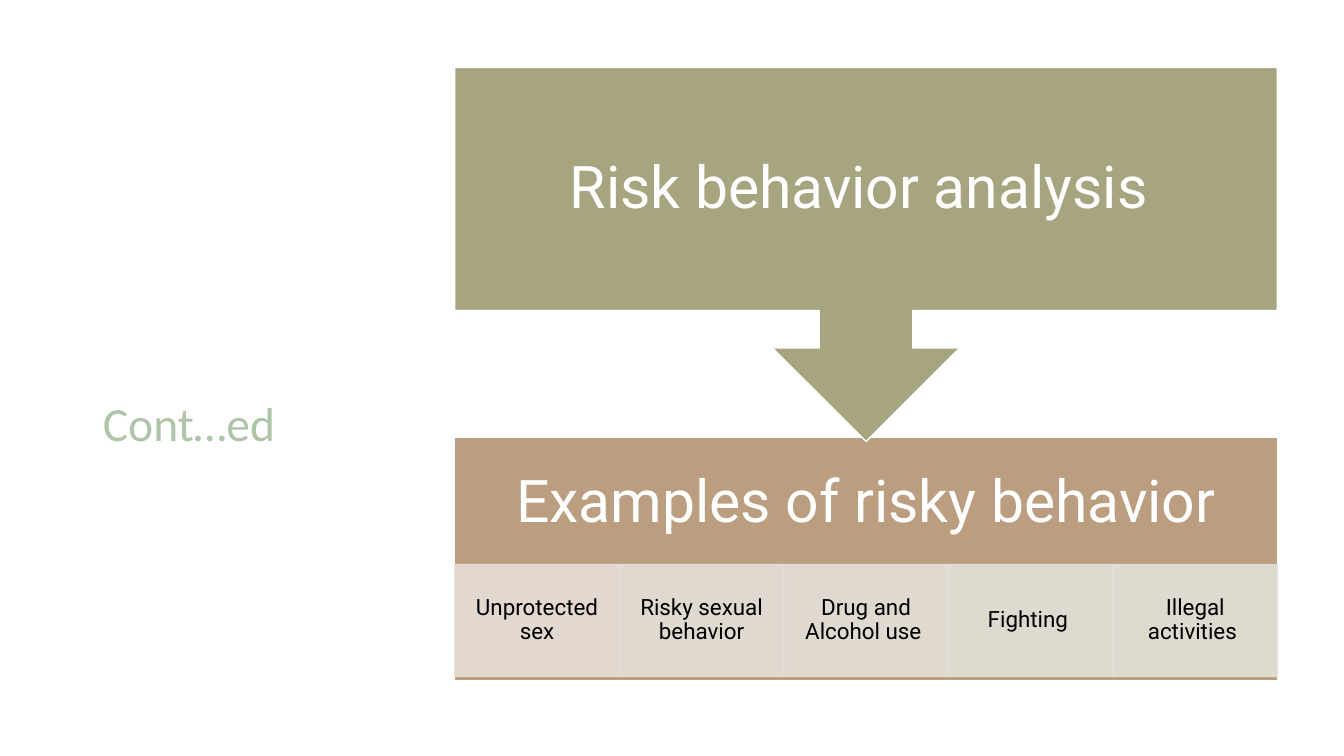
import pptx
import pptx.util
import pptx.dml.color
import pptx.enum.shapes
import pptx.enum.text
import pptx.oxml.ns
import lxml.etree

Inches = pptx.util.Inches
Shapes = pptx.enum.shapes.MSO_SHAPE
Align = pptx.enum.text.PP_ALIGN

COLOURS = {
    "title": "AEC5A8",
    "olive": "A7A57F",
    "tan": "BA9E7F",
    "white": "FFFFFF",
    "black": "000000",
}
EXAMPLES = [
    ("Unprotected sex", "E7DFD8"),
    ("Risky sexual behavior", "E5E0D8"),
    ("Drug and Alcohol use ", "E4E0D8"),
    ("Fighting ", "E3E1D8"),
    ("Illegal activities ", "E1E1D8"),
]


def rgb(value):
    return pptx.dml.color.RGBColor.from_string(value)


def set_alpha(colour_format, percent):
    colour = colour_format._xFill.find(pptx.oxml.ns.qn("a:srgbClr"))
    alpha = lxml.etree.SubElement(colour, pptx.oxml.ns.qn("a:alpha"))
    alpha.set("val", str(percent * 1000))


def write(shape, text, size, colour, font, insets, align=Align.CENTER):
    frame = shape.text_frame
    frame.word_wrap = True
    frame.vertical_anchor = pptx.enum.text.MSO_ANCHOR.MIDDLE
    (frame.margin_left, frame.margin_top,
     frame.margin_right, frame.margin_bottom) = map(Inches, insets)
    para = frame.paragraphs[0]
    para.alignment = align
    para.line_spacing = 0.9
    span = para.add_run()
    span.text = text
    span.font.size = pptx.util.Pt(size)
    span.font.name = font
    span.font.color.rgb = rgb(colour)


def add_block(page, kind, box, fill, line, opacity=100):
    shape = page.shapes.add_shape(kind, *map(Inches, box))
    shape.shadow.inherit = False
    shape.line.width = pptx.util.Pt(1)
    for part, colour in ((shape.fill, fill), (shape.line.fill, line)):
        part.solid()
        part.fore_color.rgb = rgb(colour)
        if opacity < 100:
            set_alpha(part.fore_color, opacity)
    return shape


def place_title(page, box):
    title = page.shapes.title
    title.left, title.top, title.width, title.height = map(Inches, box)
    write(title, "Cont…ed", 34, COLOURS["title"], "Calibri",
          (0.1, 1.07, 0.1, 0.05), Align.LEFT)


def add_examples(page, box):
    left, top, width, height = box
    heading_height = 1.3
    panel = add_block(page, Shapes.RECTANGLE, box, COLOURS["tan"], COLOURS["white"])
    write(panel, "Examples of risky behavior", 42, COLOURS["white"], "Roboto",
          (0.33, 0.33, 0.33, height - heading_height + 0.33))
    cell_width = width / len(EXAMPLES)
    for index, (label, tint) in enumerate(EXAMPLES):
        cell_box = (left + index * cell_width, top + 1.26, cell_width, 1.11)
        cell = add_block(page, Shapes.RECTANGLE, cell_box, tint, tint, 90)
        write(cell, label, 16, COLOURS["black"], "Roboto", (0.12, 0.02, 0.12, 0.02))


def add_analysis(page, box):
    callout = add_block(page, Shapes.DOWN_ARROW_CALLOUT, box,
                        COLOURS["olive"], COLOURS["white"])
    write(callout, "Risk behavior analysis ", 42, COLOURS["white"], "Roboto",
          (0.33, 0.33, 0.33, 0.33))


def main():
    deck = pptx.Presentation()
    deck.slide_width, deck.slide_height = Inches(13.33), Inches(7.5)
    page = deck.slides.add_slide(deck.slide_layouts.get_by_name("Title Only"))
    place_title(page, (0.92, 0.67, 3.23, 6.09))
    add_examples(page, (4.51, 4.34, 8.16, 2.41))
    add_analysis(page, (4.51, 0.67, 8.16, 3.71))
    deck.save("out.pptx")


if __name__ == "__main__":
    main()
